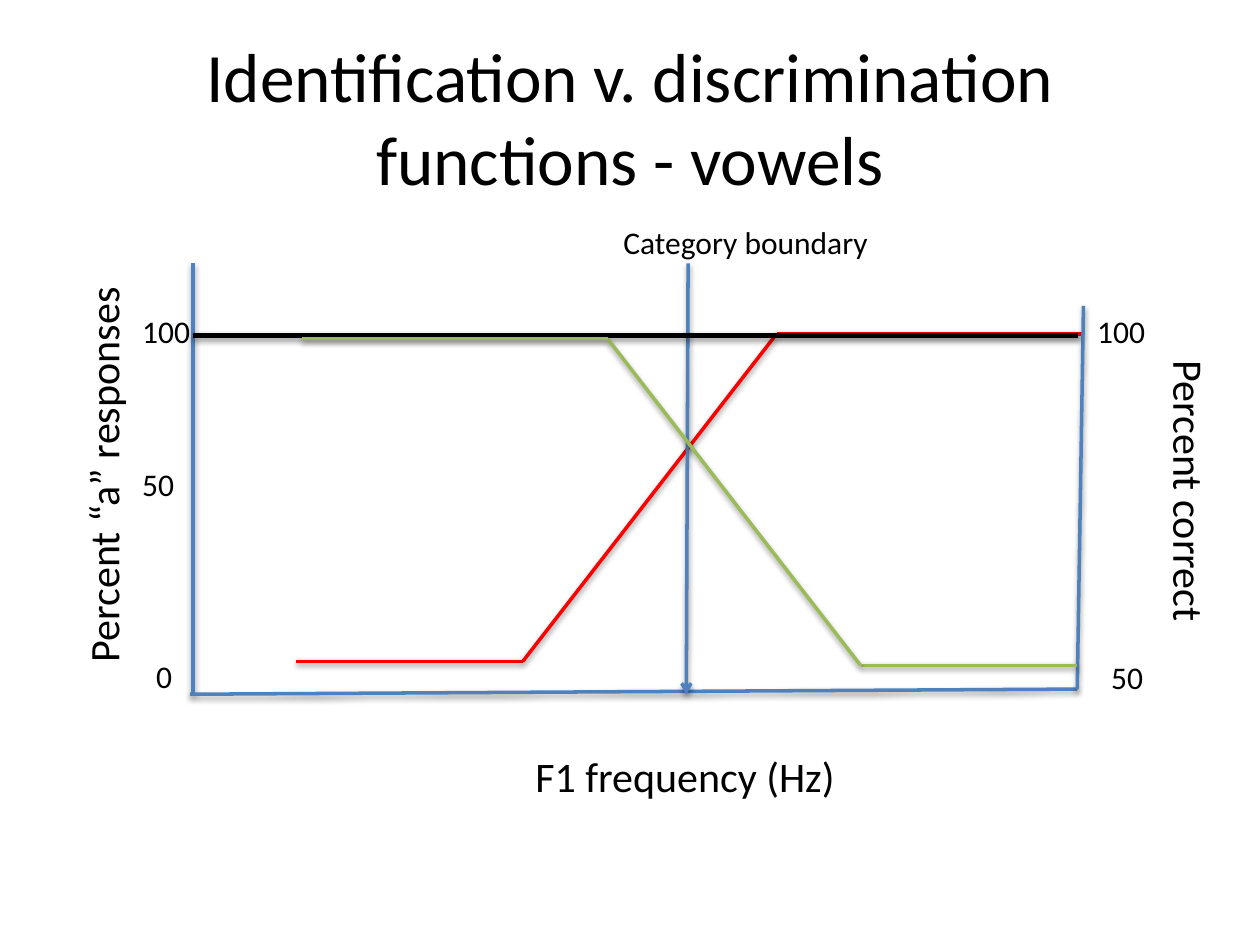
from itertools import pairwise

from lxml.etree import SubElement
from pptx import Presentation
from pptx.dml.color import RGBColor as RGB
from pptx.enum.shapes import MSO_CONNECTOR as LINE
from pptx.enum.text import MSO_ANCHOR as ANCHOR, MSO_AUTO_SIZE as FIT, PP_ALIGN as ALIGN
from pptx.oxml.ns import qn
from pptx.util import Inches, Pt

COLORS = {"text": "000000", "axis": "4F81BD", "rising": "FF0000",
          "falling": "9BBB59", "ceiling": "000000"}
FONT = "Calibri"
TICK_SIZE, LABEL_SIZE = 18, 24
TICK_LINE = 21.97  # height of one line of tick text, in points


def add_run(p, text, size):
    r = p.add_run()
    r.text = text
    r.font.size, r.font.name = Pt(size), FONT
    r.font.color.rgb = RGB.from_string(COLORS["text"])


def add_shadow(line):
    effects = SubElement(line._element.spPr, qn("a:effectLst"))
    shadow = SubElement(effects, qn("a:outerShdw"), blurRad="40000", dist="20000",
                        dir="5400000", rotWithShape="0")
    color = SubElement(shadow, qn("a:srgbClr"), val="000000")
    SubElement(color, qn("a:alpha"), val="38000")


def add_path(s, box, points, color, width=2, arrow=False):
    """Join points, given in percent of the box, with straight lines."""
    left, top, w, h = box
    spots = [(Inches(left + w * x / 100), Inches(top + h * y / 100)) for x, y in points]
    for start, end in pairwise(spots):
        line = s.shapes.add_connector(LINE.STRAIGHT, *start, *end)
        line.line.color.rgb = RGB.from_string(COLORS[color])
        line.line.width = Pt(width)
        if arrow:
            SubElement(line.line._get_or_add_ln(), qn("a:tailEnd"), type="arrow")
        add_shadow(line)


def add_text_box(s, box, wrap=False):
    sp = s.shapes.add_textbox(*map(Inches, box))
    sp.text_frame.word_wrap = wrap
    return sp


def add_label(s, box, text, size=LABEL_SIZE, rotation=0):
    sp = add_text_box(s, box)
    sp.rotation = rotation
    add_run(sp.text_frame.paragraphs[0], text, size)


def add_ticks(s, box, ticks):
    """Stack tick values; each is (text, lines of gap above, indent in inches)."""
    tf = add_text_box(s, box, wrap=True).text_frame
    for i, (text, gap, indent) in enumerate(ticks):
        p = tf.add_paragraph() if i else tf.paragraphs[0]
        p.space_before = Pt(round(gap * TICK_LINE, 1))
        p._p.get_or_add_pPr().set("marL", str(Inches(indent)))
        add_run(p, text, TICK_SIZE)


def add_title(s, box, text):
    title = s.shapes.title
    title.left, title.top, title.width, title.height = map(Inches, box)
    tf = title.text_frame
    tf.auto_size, tf.vertical_anchor = FIT.NONE, ANCHOR.MIDDLE
    tf.paragraphs[0].alignment = ALIGN.CENTER
    add_run(tf.paragraphs[0], text, 39.6)


def add_plot(s, box):
    left, top, w, h = box
    tick_top, tick_w, tick_h = top + 0.34, 0.59, 3.13
    add_path(s, box, [(0, 0), (0, 100)], "axis")
    add_path(s, box, [(100, 98.8), (-0.3, 100)], "axis")
    add_label(s, (left + 2.62, top + h + 0.4, 2.6, 0.5), "F1 frequency (Hz)")
    add_label(s, (left - 2.32, top + 1.41, 3.21, 0.5), "Percent “a” responses", rotation=270)
    add_ticks(s, (left - 0.5, tick_top, tick_w, tick_h),
              [("100", 0, 0), ("50", 3, 0), ("0", 4, 0.11)])
    add_path(s, box, [(11.7, 92.4), (37.3, 92.4), (66, 16.4), (100.7, 16.4)], "rising")
    add_path(s, box, [(100.7, 9.9), (100, 98.8)], "axis")
    add_label(s, (left + w - 0.25, top + 1.57, 2.29, 0.5), "Percent correct", rotation=90)
    add_ticks(s, (left + w + 0.06, tick_top, tick_w, tick_h), [("100", 0, 0), ("50", 8, 0.11)])
    add_path(s, box, [(56, 0), (55.8, 100)], "axis", arrow=True)
    add_label(s, (left + 3.32, top - 0.37, 2.17, 0.4), "Category boundary", TICK_SIZE)
    add_path(s, box, [(0, 16.7), (100.1, 16.7)], "ceiling", width=3)
    add_path(s, box, [(100, 93.3), (75.5, 93.3), (46.9, 17.5), (12.3, 17.5)], "falling")


def main():
    prs = Presentation()
    prs.slide_width, prs.slide_height = Inches(10), Inches(7.5)
    s = prs.slides.add_slide(prs.slide_layouts.get_by_name("Title Only"))
    add_title(s, (0.5, 0.3, 9, 1.25), "Identification v. discrimination functions - vowels")
    add_plot(s, (1.53, 2.09, 7.02, 3.42))
    prs.save("out.pptx")


if __name__ == "__main__":
    main()
